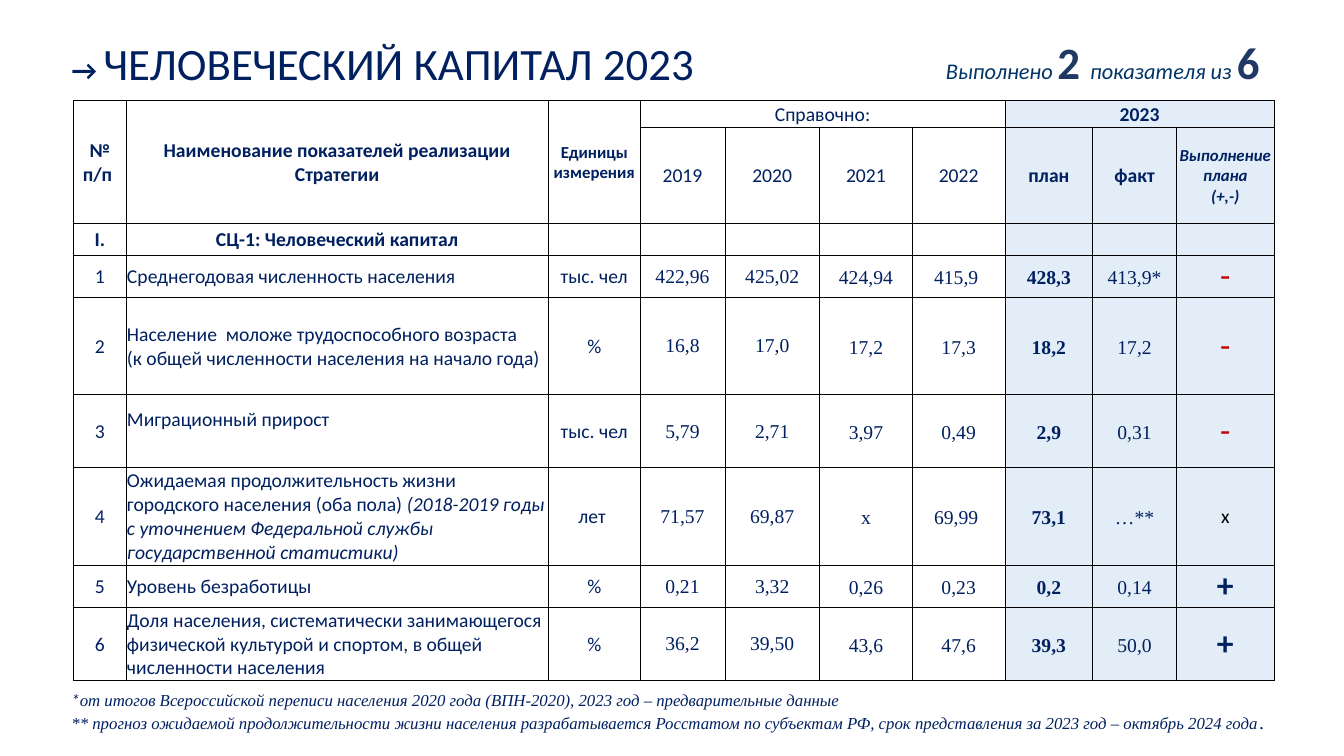
from dataclasses import dataclass

from lxml import etree
from pptx import Presentation, util as u
from pptx.dml.color import RGBColor
from pptx.enum import text
from pptx.oxml import ns

# Content: a paragraph is a list of (words, style changes) runs
TITLE = [("→ ", dict(size=20, bold=True)), ("ЧЕЛОВЕЧЕСКИЙ КАПИТАЛ 2023", dict(size=32))]
SCORE = [("Выполнено", dict(size=16, color="003366", italic=True)),
         (" ", dict(size=14, italic=True)),
         ("2 ", dict(size=32, color="203864", bold=True)),
         ("показателя из ", dict(size=16, color="003366", italic=True)),
         ("6", dict(size=32, color="203864", bold=True))]
SERIF_NOTE = dict(size=12, italic=True, font="Times New Roman")
NOTES = [[("*", dict(size=12, italic=True)),
          ("от итогов Всероссийской переписи населения 2020 года (ВПН-2020), "
           "2023 год – предварительные данные", SERIF_NOTE)],
         [("** прогноз ожидаемой продолжительности жизни населения разрабатывается Росстатом "
           "по субъектам РФ, срок представления за 2023 год – октябрь 2024 года", SERIF_NOTE),
          (".", {**SERIF_NOTE, "size": 14})]]

# Header cells: row, column, rows spanned, columns spanned, lines, style
HEADERS = [
    (0, 0, 2, 1, ["№ п/п "], dict(bold=True)),
    (0, 1, 2, 1, ["Наименование показателей реализации Стратегии"], dict(bold=True)),
    (0, 2, 2, 1, ["Единицы измерения"], dict(bold=True, size=12)),
    (0, 3, 1, 4, ["Справочно:"], {}),
    (0, 7, 1, 3, ["2023"], dict(bold=True)),
    *[(1, 3 + i, 1, 1, [str(2019 + i)], {}) for i in range(4)],
    (1, 7, 1, 1, ["план"], dict(bold=True)),
    (1, 8, 1, 1, ["факт"], dict(bold=True)),
    (1, 9, 1, 1, ["Выполнение плана", "(+,-)"], dict(bold=True, italic=True, size=12)),
    (2, 0, 1, 1, ["I."], dict(bold=True)),
    (2, 1, 1, 1, ["СЦ-1: Человеческий капитал"], dict(bold=True)),
]
# Indicators: name, cursive remark, unit, 2019-2022, plan, fact, mark
INDICATORS = [
    ("Среднегодовая численность населения", "", "тыс. чел",
     "422,96", "425,02", "424,94", "415,9 ", "428,3", "413,9*", "-"),
    ("Население  моложе трудоспособного возраста\v(к общей численности населения на начало года)",
     "", "%", "16,8", "17,0", "17,2", "17,3", "18,2", "17,2", "-"),
    ("Миграционный прирост", "", "тыс. чел", "5,79", "2,71", "3,97", "0,49", "2,9", "0,31", "-"),
    ("Ожидаемая продолжительность жизни городского населения (оба пола) ",
     "(2018-2019 годы с уточнением Федеральной службы государственной статистики)", "лет ",
     "71,57", "69,87", "х", "69,99 ", "73,1", "…**", "х"),
    ("Уровень безработицы", "", "%", "0,21", "3,32", "0,26", "0,23", "0,2", "0,14", "+"),
    ("Доля населения, систематически занимающегося физической культурой и спортом, "
     "в общей численности населения", "", "%",
     "36,2", "39,50", "43,6", "47,6", "39,3", "50,0", "+"),
]
MARKS = {"-": dict(size=24, color="C00000"), "+": dict(size=24, bold=True),
         "х": dict(color="000000")}


@dataclass
class Theme:
    ink: str = "002060"
    tint: str = "DEEBF7"
    tint_alpha: int = 85
    border: str = "000000"
    border_width: float = 0.5
    sans: str = "Calibri"
    serif: str = "Times New Roman"
    size: int = 14


theme = Theme()
WIDTH, HEIGHT = 13.33, 7.5
COLUMNS = [0.52, 4.19, 0.91, 0.84, 0.94, 0.92, 0.92, 0.87, 0.83, 0.97]
ROWS = [0.26, 0.96, 0.31, 0.41, 0.97, 0.72, 0.97, 0.41, 0.73]
TABLE_LEFT, TABLE_TOP = 0.73, 1
TEXT_LEFT, HEAD_TOP, HEAD_HEIGHT = 0.61, 0.3, 0.64
FIRST_INDICATOR, FIRST_TINTED = 3, 7
CENTER, LEFT, RIGHT = text.PP_ALIGN.CENTER, text.PP_ALIGN.LEFT, text.PP_ALIGN.RIGHT


def add_run(para, words, size=None, color=None, font=None, bold=False, italic=False):
    for index, piece in enumerate(words.split("\v")):
        if index:
            para.add_line_break()
        span = para.add_run()
        span.text = piece
        span.font.size = u.Pt(size or theme.size)
        span.font.name = font or theme.sans
        span.font.color.rgb = RGBColor.from_string(color or theme.ink)
        span.font.bold, span.font.italic = bold, italic


def write(frame, paragraphs, align=LEFT, spacing=None):
    for index, runs in enumerate(paragraphs):
        para = frame.add_paragraph() if index else frame.paragraphs[0]
        para.alignment = align
        if spacing:
            para.line_spacing = spacing
        for words, style in runs:
            add_run(para, words, **style)


def place(shape, left, top, width, height):
    shape.left, shape.top, shape.width, shape.height = map(u.Inches, (left, top, width, height))


def style_cell(cell, tinted):
    cell.vertical_anchor = text.MSO_ANCHOR.MIDDLE
    cell.margin_left = cell.margin_right = cell.margin_top = u.Inches(0.01)
    cell.margin_bottom = 0
    properties = cell._tc.get_or_add_tcPr()
    if tinted:
        cell.fill.solid()
        cell.fill.fore_color.rgb = RGBColor.from_string(theme.tint)
        color = properties.find(".//" + ns.qn("a:srgbClr"))
        etree.SubElement(color, ns.qn("a:alpha"), val=str(theme.tint_alpha * 1000))
    else:
        cell.fill.background()
    for index, side in enumerate(("lnL", "lnR", "lnT", "lnB")):
        line = etree.Element(ns.qn("a:" + side), w=str(u.Pt(theme.border_width)))
        fill = etree.SubElement(line, ns.qn("a:solidFill"))
        etree.SubElement(fill, ns.qn("a:srgbClr"), val=theme.border)
        properties.insert(index, line)
    # Small type keeps empty cells from stretching their row
    end = cell.text_frame.paragraphs[0]._p.get_or_add_endParaRPr()
    end.set("sz", str(theme.size * 100))


def fill_indicator(table, row, number, indicator):
    name, remark, unit, *values, mark = indicator
    name_runs = [(name, {})] + ([(remark, dict(italic=True))] if remark else [])
    write(table.cell(row, 0).text_frame, [[(str(number), {})]], CENTER)
    write(table.cell(row, 1).text_frame, [name_runs])
    write(table.cell(row, 2).text_frame, [[(unit, {})]], CENTER)
    for column, value in enumerate(values, 3):
        cell = table.cell(row, column)
        late = column >= 5
        if late:
            cell.margin_left = cell.margin_right = u.Inches(0.07)
            cell.margin_top = 0
        style = dict(font=theme.serif, bold=column == FIRST_TINTED)
        write(cell.text_frame, [[(value, style)]], CENTER, 1.15 if late else None)
    write(table.cell(row, 9).text_frame, [[(mark, MARKS[mark])]], CENTER)


def add_table(slide):
    frame = slide.shapes.add_table(len(ROWS), len(COLUMNS), u.Inches(TABLE_LEFT),
                                   u.Inches(TABLE_TOP), u.Inches(sum(COLUMNS)),
                                   u.Inches(sum(ROWS)))
    table = frame.table
    table.first_row = table.horz_banding = False
    for column, width in zip(table.columns, COLUMNS):
        column.width = u.Inches(width)
    for row, height in zip(table.rows, ROWS):
        row.height = u.Inches(height)
    for row in range(len(ROWS)):
        for column in range(len(COLUMNS)):
            style_cell(table.cell(row, column), column >= FIRST_TINTED)
    for row, column, down, across, lines, style in HEADERS:
        cell = table.cell(row, column)
        if down * across > 1:
            cell.merge(table.cell(row + down - 1, column + across - 1))
        write(cell.text_frame, [[(line, style)] for line in lines], CENTER)
    for number, indicator in enumerate(INDICATORS, 1):
        fill_indicator(table, FIRST_INDICATOR + number - 1, number, indicator)
    # The migration name sits one half line above the middle
    table.cell(FIRST_INDICATOR + 2, 1).margin_bottom = u.Inches(0.24)


def add_text(slide, area, paragraphs, align=LEFT):
    box = slide.shapes.add_textbox(0, 0, 0, 0)
    place(box, *area)
    box.text_frame.word_wrap = True
    write(box.text_frame, paragraphs, align)


def main():
    deck = Presentation()
    deck.slide_width, deck.slide_height = u.Inches(WIDTH), u.Inches(HEIGHT)
    page = deck.slides.add_slide(deck.slide_layouts[5])

    # Title
    title = page.shapes.title
    place(title, TEXT_LEFT, HEAD_TOP, 6.43, HEAD_HEIGHT)
    title.text_frame.word_wrap = False
    title.text_frame.auto_size = text.MSO_AUTO_SIZE.NONE
    title.text_frame.vertical_anchor = text.MSO_ANCHOR.TOP
    write(title.text_frame, [TITLE])

    # Indicators, footnotes and score
    add_table(page)
    add_text(page, (TEXT_LEFT, 6.79, 12.41, 0.54), NOTES)
    add_text(page, (9.14, HEAD_TOP, 3.45, HEAD_HEIGHT), [SCORE], RIGHT)
    deck.save("out.pptx")


if __name__ == "__main__":
    main()
